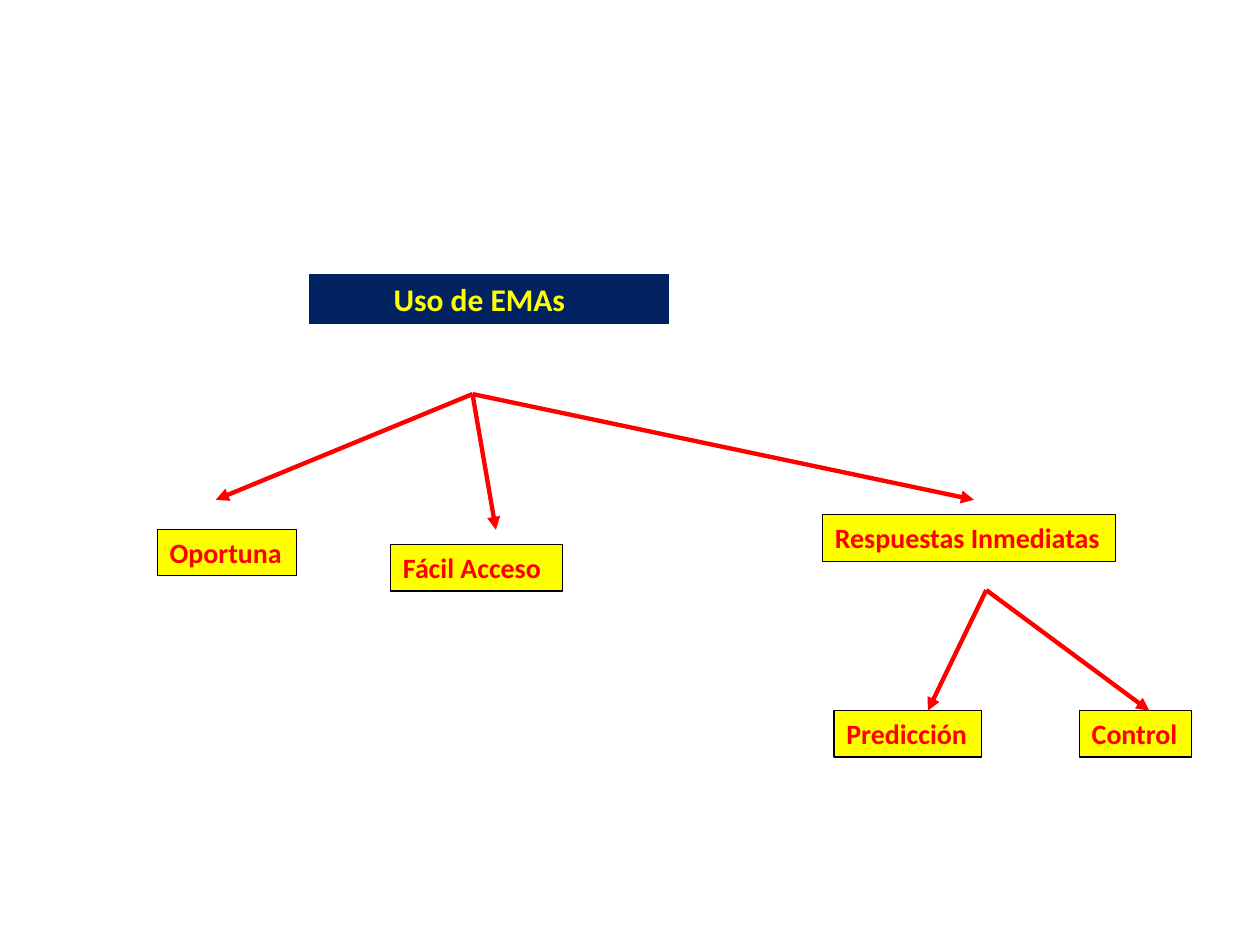
import pptx
import pptx.util
import pptx.dml.color
import pptx.enum.shapes
import pptx.enum.text
import pptx.oxml
import pptx.oxml.ns
from dataclasses import dataclass

Pt = pptx.util.Pt
Color = pptx.dml.color.RGBColor.from_string
Align = pptx.enum.text.PP_ALIGN


@dataclass(frozen=True)
class Theme:
    font: str = "Calibri"
    title_size: float = 18
    label_size: float = 16
    navy: Color = Color("002261")
    yellow: Color = Color("FFFF00")
    red: Color = Color("FF0000")
    black: Color = Color("000000")
    white: Color = Color("FFFFFF")
    outline: float = 0.75
    arrow: float = 2.5


THEME = Theme()

# Content: lengths in points
TITLE = "Uso de EMAs"
BANNER = (176.4, 156.4, 206.6, 29.2)
TITLE_BOX = (216.7, 156.4, 114.5, 29.2)
LABEL_HEIGHT = 26.7
LABELS = [  # text, left, top, width
    ("Oportuna", 89.8, 302.4, 79.5),
    ("Fácil Acceso", 223.2, 311, 98.2),
    ("Respuestas Inmediatas", 470, 294, 167.3),
    ("Predicción", 476.6, 406, 84.2),
    ("Control", 616.8, 406, 64),
]
BRANCHES = [  # common start, arrow tips
    ((270, 225.2), [(123.3, 285.6), (283.4, 302.8), (556.6, 285.6)]),
    ((563.6, 337.2), [(530.2, 406.2), (656.8, 406.2)]),
]


def add_rectangle(slide, box, fill, line):
    shape = slide.shapes.add_shape(
        pptx.enum.shapes.MSO_SHAPE.RECTANGLE, *map(Pt, box))
    shape.shadow.inherit = False
    shape.fill.solid()
    shape.fill.fore_color.rgb = fill
    shape.line.color.rgb = line
    shape.line.width = Pt(THEME.outline)
    return shape


def write_text(shape, text, size, color, alignment):
    frame = shape.text_frame
    frame.word_wrap = False
    frame.auto_size = pptx.enum.text.MSO_AUTO_SIZE.SHAPE_TO_FIT_TEXT
    frame.vertical_anchor = pptx.enum.text.MSO_ANCHOR.TOP
    paragraph = frame.paragraphs[0]
    paragraph.text = text
    paragraph.alignment = alignment
    font = paragraph.font
    font.name, font.size, font.bold = THEME.font, Pt(size), True
    font.color.rgb = color


def add_arrow(slide, start, tip):
    connector = slide.shapes.add_connector(
        pptx.enum.shapes.MSO_CONNECTOR.STRAIGHT, *map(Pt, start + tip))
    connector.line.color.rgb = THEME.red
    connector.line.width = Pt(THEME.arrow)
    qualified = pptx.oxml.ns.qn
    line = connector.line._get_or_add_ln()
    line.append(line.makeelement(qualified("a:tailEnd"), {"type": "triangle"}))
    properties = connector._element.spPr
    properties.append(properties.makeelement(qualified("a:effectLst"), {}))


def main():
    presentation = pptx.Presentation()
    presentation.slide_width, presentation.slide_height = Pt(720), Pt(540)
    slide = presentation.slides.add_slide(presentation.slide_layouts[6])

    # Title, set slightly left of the banner's centre
    add_rectangle(slide, BANNER, THEME.navy, THEME.white)
    title = slide.shapes.add_textbox(*map(Pt, TITLE_BOX))
    write_text(title, TITLE, THEME.title_size, THEME.yellow, Align.CENTER)

    # Labels
    for text, left, top, width in LABELS:
        label = add_rectangle(slide, (left, top, width, LABEL_HEIGHT),
                              THEME.yellow, THEME.black)
        write_text(label, text, THEME.label_size, THEME.red, Align.LEFT)

    # Arrows
    for start, tips in BRANCHES:
        for tip in tips:
            add_arrow(slide, start, tip)

    presentation.save("out.pptx")


if __name__ == "__main__":
    main()
